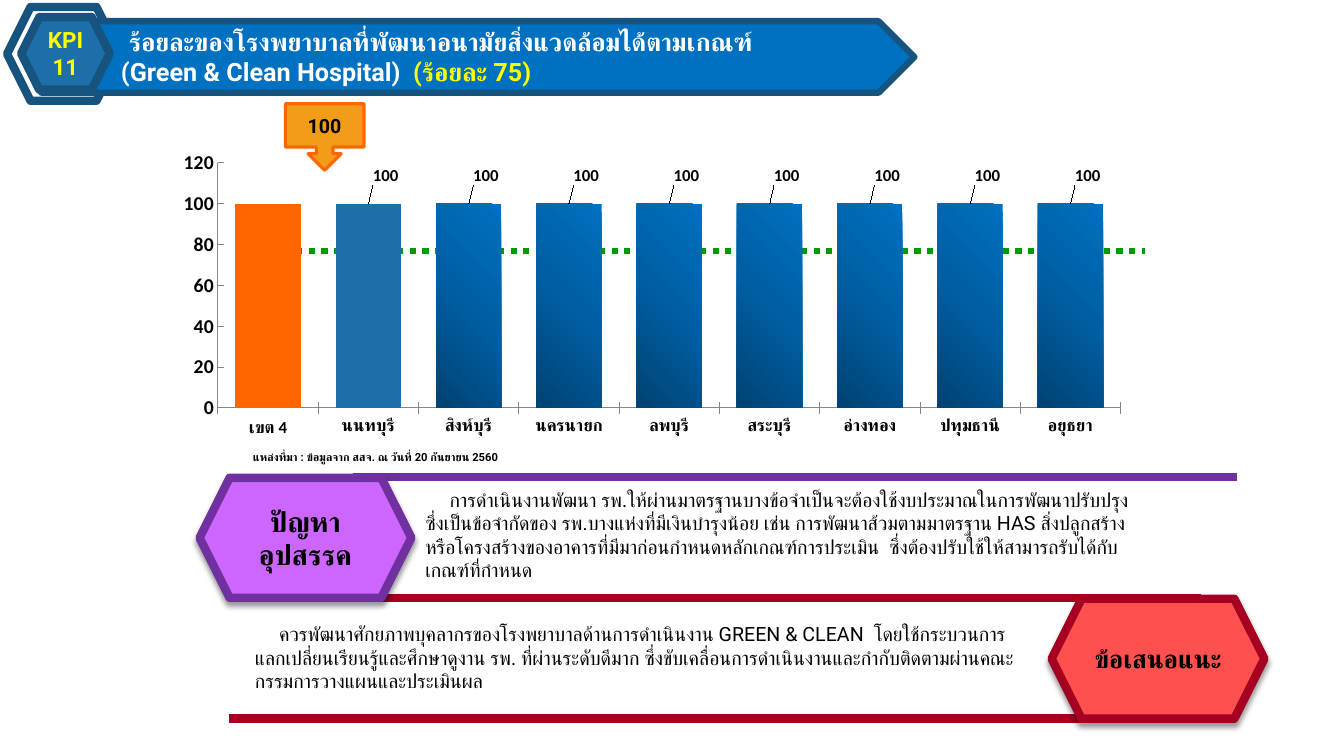
from dataclasses import dataclass
from typing import Optional

from lxml.etree import SubElement
from pptx import Presentation
from pptx.chart.data import CategoryChartData
from pptx.dml.color import RGBColor
from pptx.enum.chart import XL_CHART_TYPE, XL_LABEL_POSITION, XL_TICK_MARK
from pptx.enum.dml import MSO_LINE
from pptx.enum.shapes import MSO_CONNECTOR, MSO_SHAPE
from pptx.enum.text import MSO_ANCHOR, MSO_AUTO_SIZE, PP_ALIGN
from pptx.oxml import parse_xml
from pptx.oxml.ns import nsdecls, qn
from pptx.util import Inches, Pt

NAVY, BLUE, STEEL = "16537F", "0070C0", "1D6FA9"
PURPLE, CRIMSON, ORANGE, GREEN = "7030A0", "A50021", "FF6600", "009900"
BLACK, WHITE, YELLOW = "000000", "FFFFFF", "FFFF00"

PROVINCES = ["เขต 4", "นนทบุรี", "สิงห์บุรี", "นครนายก", "ลพบุรี",
             "สระบุรี", "อ่างทอง", "ปทุมธานี", "อยุธยา"]
PROBLEMS = [
    "การดำเนินงานพัฒนา รพ.ให้ผ่านมาตรฐานบางข้อจำเป็นจะต้องใช้งบประมาณในการพัฒนาปรับปรุง",
    "ซึ่งเป็นข้อจำกัดของ รพ.บางแห่งที่มีเงินบำรุงน้อย เช่น การพัฒนาส้วมตามมาตรฐาน HAS สิ่งปลูกสร้าง",
    "หรือโครงสร้างของอาคารที่มีมาก่อนกำหนดหลักเกณฑ์การประเมิน  ซึ่งต้องปรับใช้ให้สามารถรับได้กับ",
    "เกณฑ์ที่กำหนด",
]
ADVICE = [
    "ควรพัฒนาศักยภาพบุคลากรของโรงพยาบาลด้านการดำเนินงาน GREEN & CLEAN  โดยใช้กระบวนการ"
    "แลกเปลี่ยนเรียนรู้และศึกษาดูงาน รพ. ที่ผ่านระดับดีมาก "
    "ซึ่งขับเคลื่อนการดำเนินงานและกำกับติดตามผ่านคณะกรรมการวางแผนและประเมินผล"
]


@dataclass
class Block:
    kind: MSO_SHAPE
    box: tuple
    border: str
    weight: float
    fill: Optional[str] = None
    lines: tuple = ()
    size: float = 18
    color: str = BLACK
    shadow: bool = False


@dataclass
class Rule:
    left: float
    right: float
    y: float
    color: str
    weight: float = 6
    dash: Optional[MSO_LINE] = None


def rgb(value: str) -> RGBColor:
    return RGBColor.from_string(value)


def inches(box: tuple) -> list:
    return [Inches(length) for length in box]


def write(frame, lines, *, size, color=BLACK, bold=True, align=PP_ALIGN.LEFT,
          anchor=MSO_ANCHOR.TOP, indent=0.0, wrap=True, fit=MSO_AUTO_SIZE.NONE) -> None:
    """Each line is a string or a list of (string, colour) pairs."""
    frame.word_wrap, frame.auto_size, frame.vertical_anchor = wrap, fit, anchor
    for number, line in enumerate(lines):
        paragraph = frame.paragraphs[0] if number == 0 else frame.add_paragraph()
        paragraph.alignment = align
        if indent and number == 0:
            properties = paragraph._p.get_or_add_pPr()
            properties.set("marL", "0")
            properties.set("indent", str(Inches(indent)))
        for words, tint in [(line, color)] if isinstance(line, str) else line:
            run = paragraph.add_run()
            run.text = words
            run.font.size, run.font.bold, run.font.name = Pt(size), bold, "Roboto"
            run.font.color.rgb = rgb(tint)
            SubElement(run._r.get_or_add_rPr(), qn("a:cs")).set("typeface", "Roboto")


def draw_block(slide, block: Block):
    shape = slide.shapes.add_shape(block.kind, *inches(block.box))
    shape.shadow.inherit = False
    if block.fill:
        shape.fill.solid()
        shape.fill.fore_color.rgb = rgb(block.fill)
    else:
        shape.fill.background()
    shape.line.color.rgb = rgb(block.border)
    shape.line.width = Pt(block.weight)
    if block.shadow:
        shape._element.spPr.find(qn("a:effectLst")).append(parse_xml(
            f'<a:outerShdw {nsdecls("a")} blurRad="{Pt(4)}" dist="{Pt(3)}" dir="5400000" '
            'rotWithShape="0"><a:srgbClr val="000000"><a:alpha val="40000"/></a:srgbClr>'
            '</a:outerShdw>'))
    if block.lines:
        write(shape.text_frame, block.lines, size=block.size, color=block.color,
              align=PP_ALIGN.CENTER, anchor=MSO_ANCHOR.MIDDLE)
    return shape


def draw_rule(slide, rule: Rule) -> None:
    line = slide.shapes.add_connector(
        MSO_CONNECTOR.STRAIGHT, *inches((rule.left, rule.y, rule.right, rule.y)))
    line.line.color.rgb = rgb(rule.color)
    line.line.width = Pt(rule.weight)
    if rule.dash:
        line.line.dash_style = rule.dash
    SubElement(line._element.spPr, qn("a:effectLst"))


def draw_note(slide, box: tuple, lines, **style) -> None:
    note = slide.shapes.add_textbox(*inches(box))
    write(note.text_frame, lines, fit=MSO_AUTO_SIZE.SHAPE_TO_FIT_TEXT, **style)


def manual_layout(**settings):
    entries = "".join(f'<c:{key} val="{value}"/>' for key, value in settings.items())
    return parse_xml(f'<c:layout {nsdecls("c")}><c:manualLayout>{entries}'
                     '</c:manualLayout></c:layout>')


def shade_bar(point) -> None:
    stops = "".join(f'<a:gs pos="{place}"><a:srgbClr val="{tint}"/></a:gs>'
                    for place, tint in ((0, "004272"), (50000, "005EA2"), (100000, BLUE)))
    point.format.fill.background()
    properties = point.format.fill._xPr
    properties.replace(properties.find(qn("a:noFill")), parse_xml(
        f'<a:gradFill {nsdecls("a")} rotWithShape="1"><a:gsLst>{stops}</a:gsLst>'
        '<a:path path="circle"><a:fillToRect t="100000" r="100000"/></a:path></a:gradFill>'))


def draw_chart(slide) -> None:
    results = CategoryChartData()
    results.categories = PROVINCES
    results.add_series("Series 1", [100] * len(PROVINCES))
    chart = slide.shapes.add_chart(XL_CHART_TYPE.COLUMN_CLUSTERED,
                                   *inches((1.64, 1.46, 9.48, 3.07)), results).chart
    chart.has_title = chart.has_legend = False
    chart.font.size, chart.font.name = Pt(18), "Calibri"
    chart.font.color.rgb = rgb(BLACK)

    # Transparent background and fixed plot area
    area = chart._chartSpace.chart
    area.addnext(parse_xml(f'<c:spPr {nsdecls("c", "a")}><a:noFill/>'
                           '<a:ln><a:noFill/></a:ln></c:spPr>'))
    plot_area = area.plotArea
    for old in plot_area.findall(qn("c:layout")):
        plot_area.remove(old)
    plot_area.insert(0, manual_layout(layoutTarget="inner", xMode="edge", yMode="edge",
                                      x=0.055, y=0.051, w=0.945, h=0.792))

    # Axes
    scale = chart.value_axis
    scale.minimum_scale, scale.maximum_scale, scale.major_unit = 0, 120, 20
    scale.has_major_gridlines = False
    for axis, size, tick in ((chart.category_axis, 12, XL_TICK_MARK.CROSS),
                             (scale, 14, XL_TICK_MARK.INSIDE)):
        axis.major_tick_mark = tick
        axis.format.line.color.rgb = rgb("868686")
        font = axis.tick_labels.font
        font.size, font.bold, font.name = Pt(size), True, "Calibri"
        font.color.rgb = rgb(BLACK)

    # Bars and their labels
    plot = chart.plots[0]
    plot.gap_width, plot.vary_by_categories = 54, False
    bars = plot.series[0]
    bars.format.fill.solid()
    bars.format.fill.fore_color.rgb = rgb(STEEL)
    region = bars.points[0].format.fill
    region.solid()
    region.fore_color.rgb = rgb(ORANGE)
    for index in range(1, len(PROVINCES)):
        if index > 1:
            shade_bar(bars.points[index])
        label = bars.points[index].data_label
        label.font.size, label.font.bold = Pt(12), True
        label.font.color.rgb = rgb(BLACK)
        label.position = XL_LABEL_POSITION.OUTSIDE_END
    bars.data_labels.show_value = False
    for label in bars._element.iter(qn("c:dLbl")):
        label.insert(1, manual_layout(x=0.018, y=-0.045))


def main() -> None:
    deck = Presentation()
    deck.slide_width, deck.slide_height = Inches(13.33), Inches(7.5)
    slide = deck.slides.add_slide(deck.slide_layouts[5])
    hexagon = MSO_SHAPE.HEXAGON

    # Results chart with its target line
    draw_rule(slide, Rule(3.5, 12.27, 4.73, PURPLE))
    draw_rule(slide, Rule(2.56, 11.36, 2.49, GREEN, 4.5, MSO_LINE.ROUND_DOT))
    draw_block(slide, Block(MSO_SHAPE.DOWN_ARROW_CALLOUT, (2.83, 1.03, 0.78, 0.66),
                            ORANGE, 2.25, "F19D19", ("100",), 14))
    draw_chart(slide)

    # Heading banner
    draw_block(slide, Block(hexagon, (0.07, 0.07, 1.12, 0.93), NAVY, 6))
    draw_block(slide, Block(MSO_SHAPE.PENTAGON, (0.41, 0.21, 8.66, 0.71), NAVY, 4.5, BLUE))
    heading = slide.shapes.title
    heading.left, heading.top, heading.width, heading.height = inches((1.1, 0.21, 7.6, 0.71))
    write(heading.text_frame,
          ["ร้อยละของโรงพยาบาลที่พัฒนาอนามัยสิ่งแวดล้อมได้ตามเกณฑ์",
           [("(Green & Clean Hospital)", WHITE), ("  (ร้อยละ 75)", YELLOW)]],
          size=18, color=WHITE, indent=0.08)
    slide.shapes._spTree.append(heading._element)
    badge = draw_block(slide, Block(hexagon, (0.21, 0.17, 0.88, 0.72), NAVY, 6, STEEL,
                                    ("KPI", "11"), 16, YELLOW))
    badge.text_frame.margin_left = badge.text_frame.margin_right = 0

    # Problems and suggestions
    draw_note(slide, (2.41, 4.42, 2.96, 0.24),
              ["แหล่งที่มา : ข้อมูลจาก สสจ. ณ วันที่ 20 กันยายน 2560"], size=8, wrap=False)
    draw_rule(slide, Rule(3.65, 11.91, 5.93, CRIMSON))
    draw_block(slide, Block(hexagon, (1.98, 4.74, 2.1, 1.19), PURPLE, 6, "CC66FF",
                            ("ปัญหาอุปสรรค",), 20, shadow=True))
    draw_rule(slide, Rule(2.27, 10.9, 7.13, CRIMSON))
    draw_block(slide, Block(hexagon, (10.43, 5.94, 2.11, 1.19), CRIMSON, 6, "FF5050",
                            ("ข้อเสนอแนะ",), 18, shadow=True))
    draw_note(slide, (4.12, 4.79, 8.15, 1.04), PROBLEMS, size=14, bold=False, indent=0.24)
    draw_note(slide, (2.43, 6.12, 7.79, 0.81), ADVICE, size=14, bold=False, indent=0.24)

    deck.save("out.pptx")


if __name__ == "__main__":
    main()
